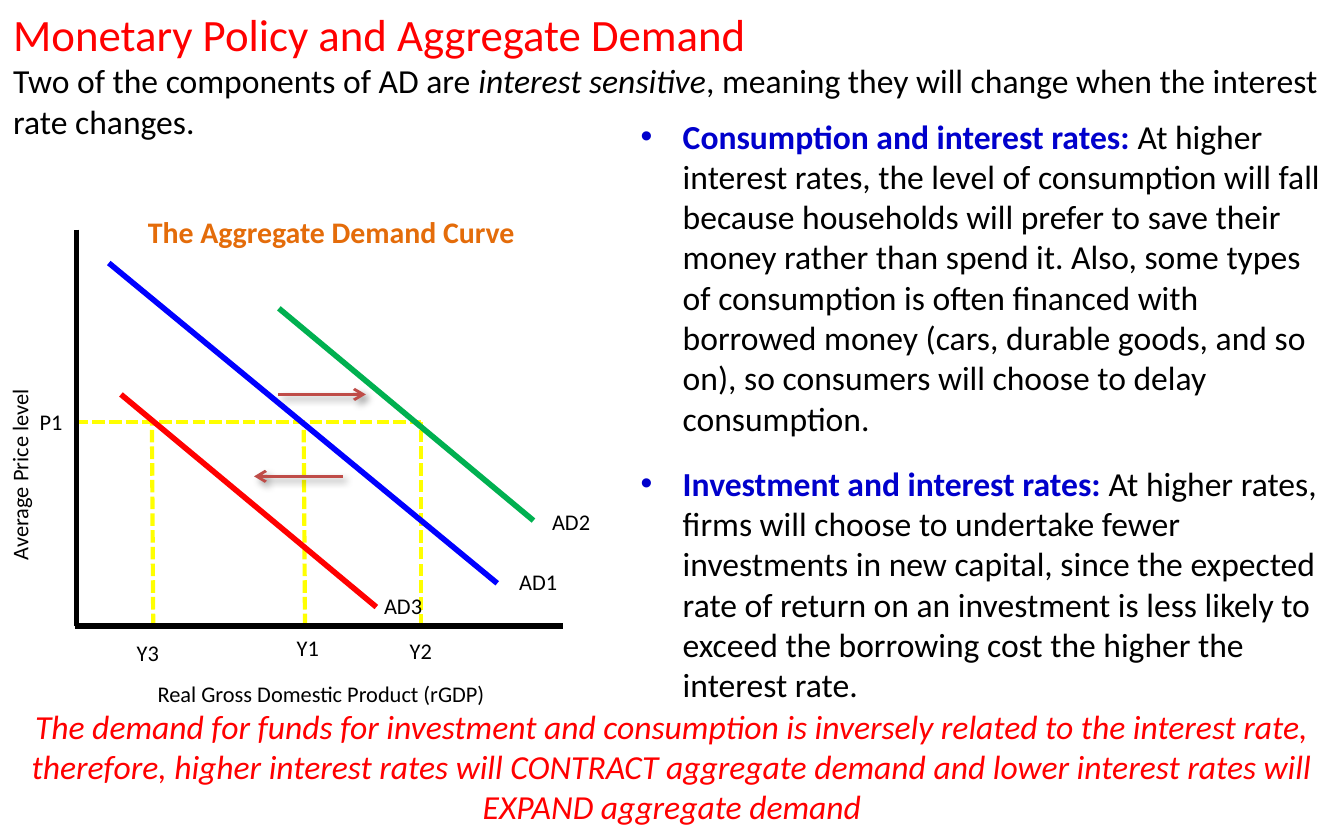
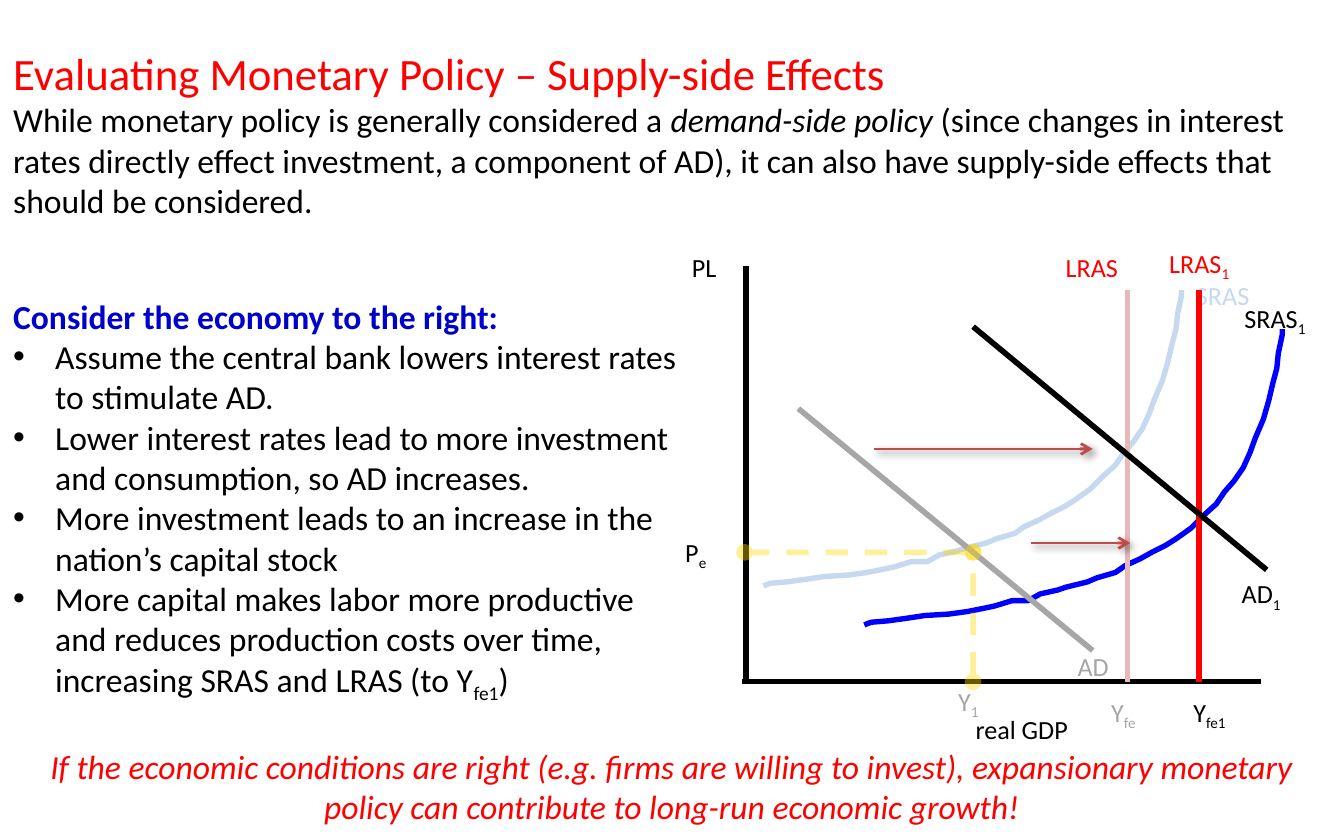
from dataclasses import dataclass

from lxml import etree
from pptx import Presentation
from pptx.dml.color import RGBColor
from pptx.enum.dml import MSO_LINE
from pptx.enum.shapes import MSO_CONNECTOR
from pptx.enum.text import MSO_AUTO_SIZE, PP_ALIGN
from pptx.oxml import parse_xml
from pptx.oxml.ns import nsdecls, qn
from pptx.util import Pt

LEFT, CENTER = PP_ALIGN.LEFT, PP_ALIGN.CENTER
DASH, SHORT_DASH = MSO_LINE.DASH, MSO_LINE.SQUARE_DOT
STRAIGHT = MSO_CONNECTOR.STRAIGHT
GROW = MSO_AUTO_SIZE.SHAPE_TO_FIT_TEXT


@dataclass(frozen=True)
class Theme:
    font: str = "Calibri"
    title: int = 24
    body: int = 18
    caption: int = 16
    label: int = 14
    small: int = 12
    black: str = "000000"
    red: str = "FF0000"
    navy: str = "0000CC"
    blue: str = "0000FF"
    pale_blue: str = "C6D9F1"
    green: str = "00B050"
    orange: str = "E46C0A"
    yellow: str = "FFFF00"
    gold: str = "FFD700"
    gray: str = "A6A6A6"
    pink: str = "E6B9B8"
    brick: str = "BF4C48"


THEME = Theme()
ITALIC = {"italic": True}
HEADING = {"bold": True, "color": THEME.navy}
SUBSCRIPT = {"baseline": "-25000"}
SHADOW = (
    f'<a:effectLst {nsdecls("a")}><a:outerShdw blurRad="{Pt(4)}" dist="{Pt(3)}" '
    'dir="2700000" rotWithShape="0"><a:srgbClr val="000000"><a:alpha val="40000"/>'
    "</a:srgbClr></a:outerShdw></a:effectLst>"
)
NO_SHADOW = f'<a:effectLst {nsdecls("a")}/>'

SUPPLY_CURVE = [
    (0, 158.4), (3.6, 157), (13, 156.2), (23, 154.8), (32.4, 153.4), (45.4, 152.6),
    (55.4, 151.2), (62.6, 149.8), (69.8, 148.3), (79.2, 145.4), (87.8, 145.4),
    (94.3, 141.8), (103.7, 139.7), (108, 138.2), (119.5, 135.4), (124.6, 133.2),
    (134.6, 130.3), (139.7, 126.7), (147.6, 123.1), (154.1, 119.5), (161.3, 115.9),
    (167, 112.3), (175, 106.6), (182.2, 99.4), (188.6, 93.6), (193, 87.1),
    (198, 81.4), (203, 74.2), (206.6, 66.2), (209.5, 58.3), (213.8, 48.2),
    (216.7, 38.2), (218.9, 28.8), (221, 20.9), (221.8, 13), (223.9, 2.9), (223.9, 0),
]


class Deck:
    def __init__(self, theme):
        self.theme = theme
        self.presentation = Presentation()
        self.presentation.slide_width = Pt(720)
        self.presentation.slide_height = Pt(450)
        self.slide = None

    def new_slide(self):
        self.slide = self.presentation.slides.add_slide(self.presentation.slide_layouts[6])

    def text(self, box, paragraphs, rotation=0):
        frame_shape = self.slide.shapes.add_textbox(*map(Pt, box))
        frame_shape.rotation = rotation
        frame = frame_shape.text_frame
        for name, value in {"word_wrap": True, "auto_size": GROW}.items():
            setattr(frame, name, value)
        for index, (runs, options) in enumerate(paragraphs):
            paragraph = frame.add_paragraph() if index else frame.paragraphs[0]
            if options.get("bullet"):
                self.bullet(paragraph)
            paragraph.alignment = options.get("align", LEFT)
            paragraph.space_before = Pt(options.get("before", 0))
            for content, style in runs:
                self.run(paragraph, content, {**options.get("style", {}), **style})

    def bullet(self, paragraph):
        properties = paragraph._p.get_or_add_pPr()
        properties.set("marL", str(Pt(22.5)))
        properties.set("indent", str(-Pt(22.5)))
        etree.SubElement(properties, qn("a:buFont")).set("typeface", "Arial")
        etree.SubElement(properties, qn("a:buChar")).set("char", "•")

    def run(self, paragraph, content, style):
        run = paragraph.add_run()
        run.text = content
        values = {"name": self.theme.font, "size": self.theme.body,
                  "color": self.theme.black, **style}
        color = values.pop("color")
        baseline = values.pop("baseline", None)
        values["size"] = Pt(values["size"])
        for name, value in values.items():
            setattr(run.font, name, value)
        run.font.color.rgb = RGBColor.from_string(color)
        if baseline:
            run._r.get_or_add_rPr().set("baseline", baseline)

    def heading(self, top, height, title, introduction):
        title_style = {"size": self.theme.title, "color": self.theme.red}
        self.text((0, top, 720, height), [([(title, title_style)], {}), (introduction, {})])

    def conclusion(self, top, content):
        style = {"italic": True, "color": self.theme.red}
        self.text((0, top, 720, 447 - top), [([(content, style)], {"align": CENTER})])

    def label(self, box, content, rotation=0, align=LEFT, **style):
        base, _, subscript = content.partition("_")
        runs = [(base, {})] + ([(subscript, SUBSCRIPT)] if subscript else [])
        self.text(box, [(runs, {"align": align, "style": style})], rotation)

    def line(self, start, end, color, width=3, dash=None, ends=(), opacity=None, effect=NO_SHADOW):
        line_shape = self.slide.shapes.add_connector(STRAIGHT, *map(Pt, (*start, *end)))
        line = line_shape.line
        line.color.rgb = RGBColor.from_string(color)
        for name, value in {"width": Pt(width), "dash_style": dash}.items():
            setattr(line, name, value)
        outline = line_shape._element.spPr.find(qn("a:ln"))
        if opacity:
            tint = outline.find(f'.//{qn("a:srgbClr")}')
            etree.SubElement(tint, qn("a:alpha")).set("val", str(opacity * 1000))
        for tag, kind in ends:
            etree.SubElement(outline, qn(tag)).set("type", kind)
        line_shape._element.spPr.append(parse_xml(effect))

    def shift_arrow(self, start, end):
        self.line(start, end, self.theme.brick, 1.5, ends=[("a:tailEnd", "arrow")], effect=SHADOW)

    def equilibrium_guide(self, start, end):
        self.line(start, end, self.theme.gold, dash=DASH, opacity=40,
                  ends=[("a:headEnd", "oval"), ("a:tailEnd", "oval")])

    def curve(self, left, top, points, color):
        outline = [(Pt(left + x), Pt(top + y)) for x, y in points]
        builder = self.slide.shapes.build_freeform(*outline[0])
        builder.add_line_segments(outline[1:], close=False)
        curve = builder.convert_to_shape()
        curve.shadow.inherit = False
        curve.fill.background()
        curve.line.color.rgb = RGBColor.from_string(color)
        curve.line.width = Pt(2.9)


def build_demand_slide(deck):
    theme = deck.theme
    deck.new_slide()
    deck.heading(0, 80, "Monetary Policy and Aggregate Demand", [
        ("Two of the components of AD are ", {}),
        ("interest sensitive", ITALIC),
        (", meaning they will change when the interest rate changes.", {}),
    ])
    deck.conclusion(374.4, "The demand for funds for investment and consumption is inversely "
                    "related to the interest rate, therefore, higher interest rates will CONTRACT "
                    "aggregate demand and lower interest rates will EXPAND aggregate demand")

    base, price = 335.5, 226
    for start, end in [
        ((225.4, base), (225.4, price)), ((40.5, price), (225.4, price)),
        ((82.1, base), (81.4, price)), ((163.4, base), (162.7, price)),
    ]:
        deck.line(start, end, theme.yellow, 2.25, SHORT_DASH)
    deck.line((41, 123.1), (41, base), theme.black)
    deck.line((40.3, base), (301.7, base), theme.black)

    deck.label((-73.4, 212.4, 167.8, 21.6), "Average Price level", 270, size=theme.small)
    deck.label((34.6, 360.7, 275, 21.6), "Real Gross Domestic Product (rGDP)",
               align=CENTER, size=theme.small)
    deck.label((71.3, 110.9, 212.4, 26.6), "The Aggregate Demand Curve",
               align=CENTER, size=theme.caption, color=theme.orange, bold=True)
    for start, end, color in [
        ((58.3, 140.9), (266.4, 312.5), theme.blue),
        ((149.4, 165.2), (285.8, 278.9), theme.green),
        ((64.8, 211.3), (201.6, 325.2), theme.red),
    ]:
        deck.line(start, end, color)
    for left, top, content in [
        (266.8, 301, "AD1"), (284.4, 268.6, "AD2"), (194.4, 313.9, "AD3"),
        (143.3, 336.2, "Y1"), (203.8, 337.7, "Y2"), (57.6, 338.8, "Y3"), (5.8, 215.3, "P1"),
    ]:
        deck.label((left, top, 43.2, 21.6), content, align=CENTER, size=theme.small)
    deck.shift_arrow((149, 211.3), (196, 211.3))
    deck.shift_arrow((183.6, 255.2), (136.1, 255.2))

    deck.text((336.2, 58.3, 383.8, 347.8), [
        ([("Consumption and interest rates: ", HEADING),
          ("At higher interest rates, the level of consumption will fall because households "
           "will prefer to save their money rather than spend it. Also, some types of "
           "consumption is often financed with borrowed money (cars, durable goods, and so on), "
           "so consumers will choose to delay consumption.", {})], {"bullet": True}),
        ([("Investment and interest rates: ", HEADING),
          ("At higher rates, firms will choose to undertake fewer investments in new capital, "
           "since the expected rate of return on an investment is less likely to exceed the "
           "borrowing cost the higher the interest rate.", {})], {"bullet": True, "before": 13.2}),
    ])


def build_supply_slide(deck):
    theme = deck.theme
    deck.new_slide()
    deck.heading(20.9, 101.5, "Evaluating Monetary Policy – Supply-side Effects", [
        ("While monetary policy is generally considered a ", {}),
        ("demand-side policy", ITALIC),
        (" (since changes in interest rates directly effect investment, a component of AD), "
         "it can also have supply-side effects that should be considered.", {}),
    ])
    steps = [
        [("Assume the central bank lowers interest rates to stimulate AD.", {})],
        [("Lower interest rates lead to more investment and consumption, so AD increases.", {})],
        [("More investment leads to an increase in the nation’s capital stock", {})],
        [("More capital makes labor more productive and reduces production costs over time, "
          "increasing SRAS and LRAS (to Y", {}), ("fe1", SUBSCRIPT), (")", {})],
    ]
    deck.text((0, 154.8, 372.2, 225.4),
              [([("Consider the economy to the right:", HEADING)], {})]
              + [(step, {"bullet": True}) for step in steps])

    def graph_label(left, top, content, color=theme.black, width=60):
        deck.label((left, top, width, 24.5), content, size=theme.label, color=color)

    base, price, output = 365.2, 295.9, 521.3
    deck.line((399.6, 142.6), (399.6, base), theme.black)
    deck.line((397.4, base), (675.4, base), theme.black)
    graph_label(363.6, 131, "PL")
    graph_label(633.6, 146.2, "SRAS", theme.pale_blue)
    deck.curve(409, 155.5, SUPPLY_CURVE, theme.pale_blue)
    deck.curve(463, 176.4, SUPPLY_CURVE, theme.blue)
    graph_label(659.5, 158.4, "SRAS_1")
    graph_label(360, 283.7, "P_e")
    graph_label(515.5, 378.7, "real GDP", width=120)
    graph_label(506.2, 363.6, "Y_1", theme.gray)
    deck.line((604.1, base), (604.1, 155.5), theme.pink)
    graph_label(563.8, 131, "LRAS", theme.red)
    deck.line((642.2, base), (642.2, 155.5), theme.red)
    graph_label(619.2, 128.9, "LRAS_1", theme.red)
    deck.equilibrium_guide((output, price), (398.9, price))
    deck.line((427.7, 218.9), (585.4, 348.5), theme.gray)
    graph_label(570.2, 344.9, "AD", theme.gray)
    deck.line((521.3, 175), (678.6, 305.3), theme.black)
    graph_label(658.1, 306, "AD_1")
    deck.equilibrium_guide((output, base), (output, price))
    graph_label(632.2, 369.4, "Y_fe1")
    graph_label(588.2, 369.4, "Y_fe", theme.gray)
    deck.shift_arrow((468, 240.5), (585.4, 240.5))
    deck.shift_arrow((552.2, 290.9), (605.5, 290.9))
    deck.conclusion(396, "If the economic conditions are right (e.g. firms are willing to invest), "
                    "expansionary monetary policy can contribute to long-run economic growth!")


def main():
    deck = Deck(THEME)
    build_demand_slide(deck)
    build_supply_slide(deck)
    deck.presentation.save("out.pptx")


if __name__ == "__main__":
    main()
